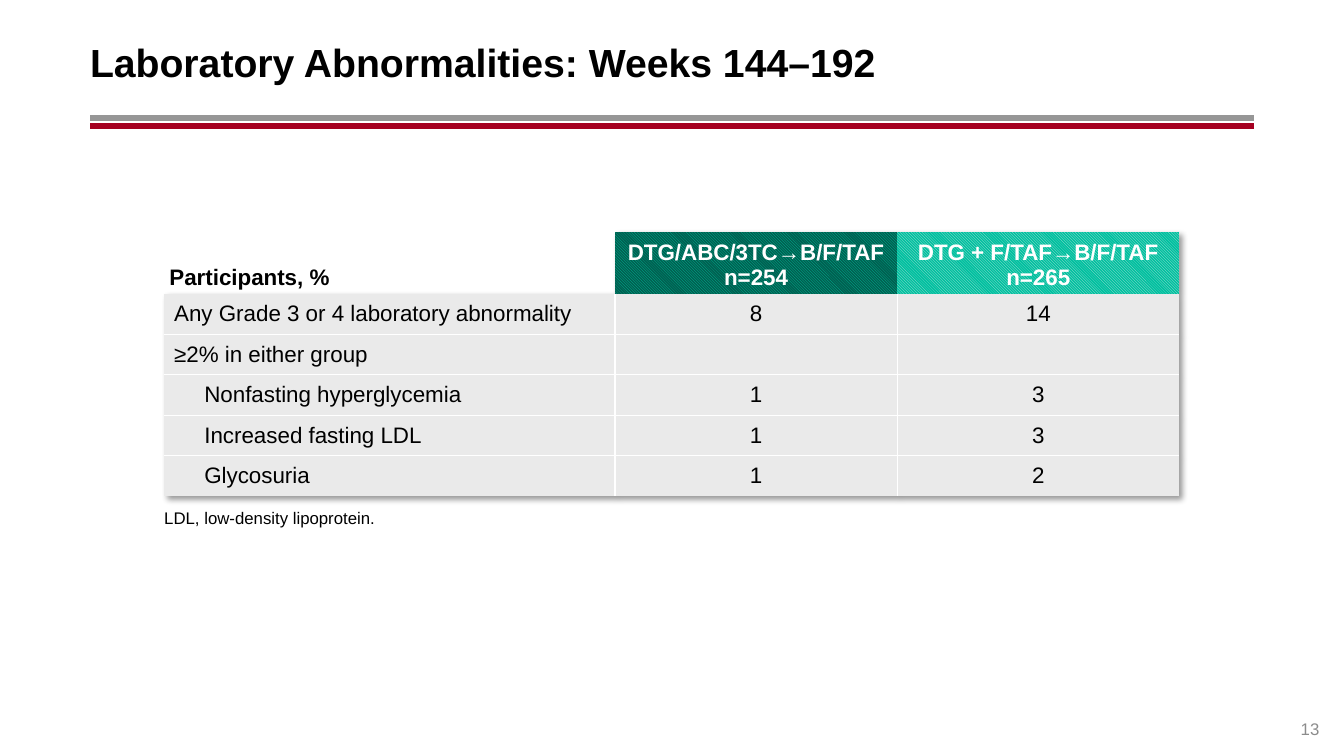
import lxml.etree
import pptx
import pptx.dml.color
import pptx.enum.dml
import pptx.enum.shapes
import pptx.enum.text
import pptx.oxml
import pptx.oxml.ns
import pptx.util

Cm = pptx.util.Cm
Pt = pptx.util.Pt
qn = pptx.oxml.ns.qn
ALIGN = pptx.enum.text.PP_ALIGN
ANCHOR = pptx.enum.text.MSO_ANCHOR

COLOURS = {
    "black": "000000", "white": "FFFFFF", "grey rule": "969696", "red rule": "A50021",
    "page number": "8C8C8C", "body": "EAEAEA", "dark green": "006050",
    "green": "00C0A0", "pale green": "B8E2D8",
}
PLAIN_TABLE_STYLE = "{2D5ABB26-0587-4C30-8999-92F81FD0307C}"


def rgb(name):
    return pptx.dml.color.RGBColor.from_string(COLOURS[name])


class SlideBuilder:
    def __init__(self, slide, font_name="Arial"):
        self.slide = slide
        self.font_name = font_name

    def style(self, paragraph, size, colour="black", bold=False, align=ALIGN.LEFT):
        paragraph.alignment = align
        font = paragraph.font
        font.name, font.size, font.bold = self.font_name, Pt(size), bold
        font.color.rgb = rgb(colour)

    def text(self, wording, left, top, width, height, size, anchor, **style):
        frame = self.slide.shapes.add_textbox(Cm(left), Cm(top), Cm(width), Cm(height)).text_frame
        frame.word_wrap = True
        frame.vertical_anchor = anchor
        frame.margin_left = frame.margin_right = frame.margin_top = frame.margin_bottom = 0
        frame.text = wording
        self.style(frame.paragraphs[0], size, **style)

    def rule(self, left, right, y, colour):
        connector = self.slide.shapes.add_connector(
            pptx.enum.shapes.MSO_CONNECTOR.STRAIGHT, Cm(left), Cm(y), Cm(right), Cm(y))
        connector.line.width = Pt(4.25)
        connector.line.color.rgb = rgb(colour)
        lxml.etree.SubElement(connector._element.spPr, qn("a:effectLst"))

    def table(self, row_count, left, top, column_widths, header_height, row_height):
        heights = [header_height] + [row_height] * (row_count - 1)
        frame = self.slide.shapes.add_table(
            row_count, len(column_widths), Cm(left), Cm(top),
            Cm(sum(column_widths)), Cm(sum(heights)))
        table = frame.table
        table.first_row = table.horz_banding = False
        for column, width in zip(table.columns, column_widths):
            column.width = Cm(width)
        for row, height in zip(table.rows, heights):
            row.height = Cm(height)
        # Plain table style and a soft shadow
        properties = table._tbl.tblPr
        properties.find(qn("a:tableStyleId")).text = PLAIN_TABLE_STYLE
        properties.insert(0, pptx.oxml.parse_xml(
            f'<a:effectLst {pptx.oxml.ns.nsdecls("a")}>'
            '<a:outerShdw blurRad="50800" dist="38100" dir="2700000" algn="tl" rotWithShape="0">'
            '<a:srgbClr val="000000"><a:alpha val="40000"/></a:srgbClr>'
            '</a:outerShdw></a:effectLst>'))
        return table

    def cell(self, cell, wording, anchor, side_margin=0.25, indent=0, **style):
        cell.vertical_anchor = anchor
        cell.margin_left = cell.margin_right = Cm(side_margin)
        cell.margin_top = cell.margin_bottom = Cm(0.1)
        cell.text = wording
        for paragraph in cell.text_frame.paragraphs:
            self.style(paragraph, 16, **style)
            if indent:
                paragraph.level = 1
                properties = paragraph._p.get_or_add_pPr()
                properties.set("marL", str(Cm(indent)))
                properties.set("indent", "0")

    def pattern(self, cell, front, back):
        cell.fill.patterned()
        cell.fill.pattern = pptx.enum.dml.MSO_PATTERN.LIGHT_DOWNWARD_DIAGONAL
        cell.fill.fore_color.rgb = rgb(front)
        cell.fill.back_color.rgb = rgb(back)

    def borders(self, cell, sides):
        for side in sides:
            cell._tc.get_or_add_tcPr().append(pptx.oxml.parse_xml(
                f'<a:ln{side} {pptx.oxml.ns.nsdecls("a")} w="12700"><a:solidFill>'
                f'<a:srgbClr val="{COLOURS["white"]}"/></a:solidFill></a:ln{side}>'))


def main():
    presentation = pptx.Presentation()
    presentation.slide_width, presentation.slide_height = Cm(33.87), Cm(19.05)
    builder = SlideBuilder(presentation.slides.add_slide(presentation.slide_layouts[6]))

    # Title and double rule
    builder.rule(2.27, 31.6, 2.97, "grey rule")
    builder.rule(2.27, 31.6, 3.18, "red rule")
    builder.text("Laboratory Abnormalities: Weeks 144–192", 2.27, 0.46, 29.33, 2.18,
                 28, ANCHOR.MIDDLE, bold=True)

    # Footnote and page number
    builder.text("LDL, low-density lipoprotein.", 4.14, 12.8, 25.58, 0.51, 12, ANCHOR.BOTTOM)
    builder.text("13", 31.6, 17.6, 1.65, 1.02, 12, ANCHOR.BOTTOM,
                 colour="page number", align=ALIGN.RIGHT)

    # Table header
    rows = [
        ("Any Grade 3 or 4 laboratory abnormality", "8", "14", 0),
        ("≥2% in either group", "", "", 0),
        ("Nonfasting hyperglycemia", "1", "3", 0.76),
        ("Increased fasting LDL", "1", "3", 0.76),
        ("Glycosuria", "1", "2", 0.76),
    ]
    table = builder.table(len(rows) + 1, 4.14, 5.85, [11.36, 7.11, 7.11], 1.47, 1.02)
    builder.cell(table.cell(0, 0), "Participants, %", ANCHOR.BOTTOM, 0.13, bold=True)
    groups = [
        ("DTG/ABC/3TC→B/F/TAF\nn=254", 0, "green", "dark green"),
        ("DTG + F/TAF→B/F/TAF\nn=265", 0.25, "pale green", "green"),
    ]
    for column, (wording, margin, front, back) in enumerate(groups, 1):
        cell = table.cell(0, column)
        builder.cell(cell, wording, ANCHOR.BOTTOM, margin,
                     colour="white", bold=True, align=ALIGN.CENTER)
        builder.pattern(cell, front, back)

    # Table body, with white lines between cells only
    for row, (label, *values, indent) in enumerate(rows, 1):
        for column, wording in enumerate([label, *values]):
            cell = table.cell(row, column)
            builder.cell(cell, wording, ANCHOR.MIDDLE, indent=0 if column else indent,
                         align=ALIGN.CENTER if column else ALIGN.LEFT)
            inner = {"L": column > 0, "R": column < 2, "T": row > 1, "B": row < len(rows)}
            builder.borders(cell, [side for side, shown in inner.items() if shown])
            cell.fill.solid()
            cell.fill.fore_color.rgb = rgb("body")

    presentation.save("out.pptx")


if __name__ == "__main__":
    main()
